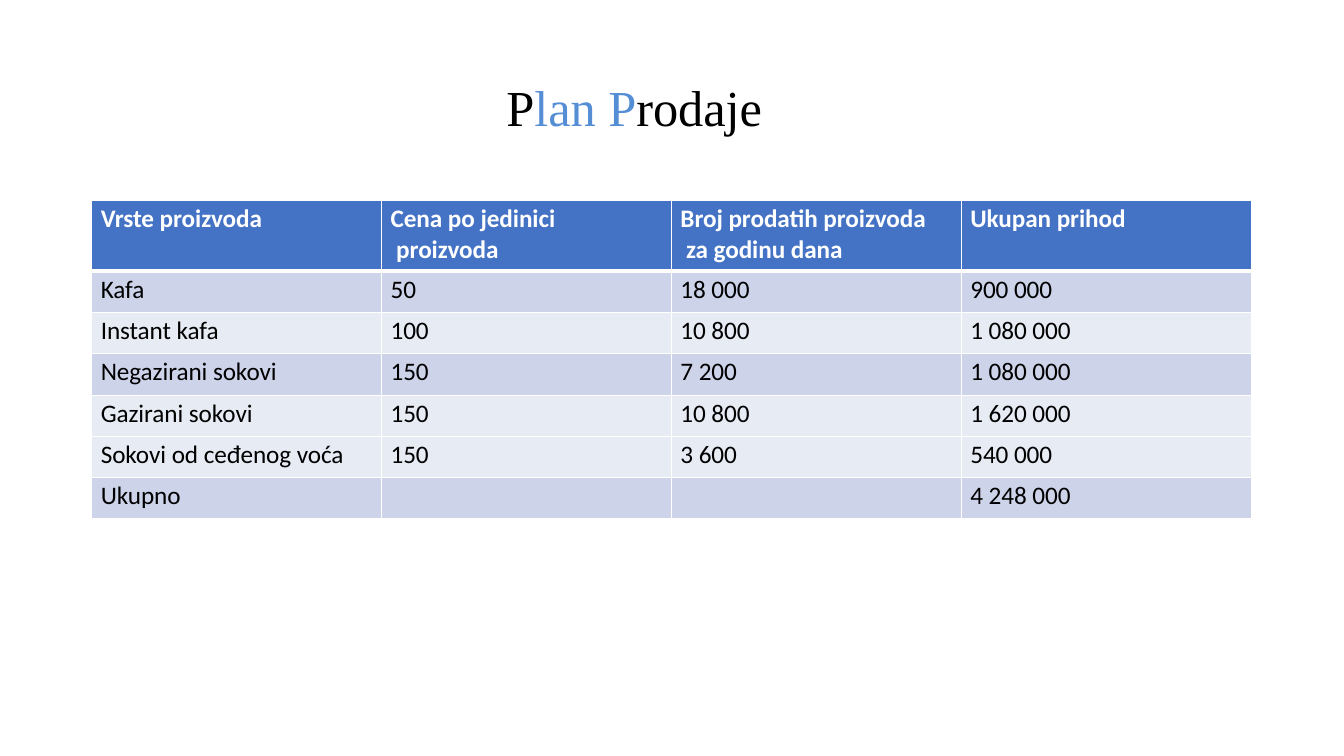
from lxml import etree
from pptx import Presentation
from pptx.dml.color import RGBColor
from pptx.enum import text as enum_text
from pptx.oxml import ns
from pptx.util import Inches, Pt

BLACK = RGBColor(0x00, 0x00, 0x00)
WHITE = RGBColor(0xFF, 0xFF, 0xFF)
TITLE_BLUE = RGBColor(0x55, 0x8E, 0xD5)
HEADER_BLUE = RGBColor(0x44, 0x72, 0xC4)
BAND_DARK = RGBColor(0xCD, 0xD4, 0xEA)
BAND_LIGHT = RGBColor(0xE7, 0xEB, 0xF4)

TABLE_WIDTH = 11.5
HEADINGS = [
    "Vrste proizvoda",
    "Cena po jedinici\v proizvoda",
    "Broj prodatih proizvoda\v za godinu dana",
    "Ukupan prihod",
]
SALES = [
    (BAND_DARK, ["Kafa", "50", "18 000", "900 000"]),
    (BAND_LIGHT, ["Instant kafa", "100", "10 800", "1 080 000"]),
    (BAND_DARK, ["Negazirani sokovi", "150", "7 200", "1 080 000"]),
    (BAND_LIGHT, ["Gazirani sokovi", "150", "10 800", "1 620 000"]),
    (BAND_LIGHT, ["Sokovi od ceđenog voća", "150", "3 600", "540 000"]),
    (BAND_DARK, ["Ukupno", "", "", "4 248 000"]),
]


def add_text(paragraph, content, *, font, size, color, bold=False):
    """Append formatted text to a paragraph, breaking lines at vertical tabs."""
    for index, line in enumerate(content.split("\v")):
        if index:
            paragraph.add_line_break()
        run = paragraph.add_run()
        run.text = line
        run.font.name = font
        run.font.size = Pt(size)
        run.font.bold = bold
        run.font.color.rgb = color
        run.font._element.set("spc", "-5")


def add_title(slide):
    """Add the centred two-colour title."""
    box = slide.shapes.add_textbox(Inches(1), Inches(0.75), Inches(10.58), Inches(0.62))
    frame = box.text_frame
    frame.word_wrap = True
    frame.margin_left = frame.margin_right = frame.margin_bottom = 0
    frame.margin_top = Inches(0.01)
    paragraph = frame.paragraphs[0]
    paragraph.alignment = enum_text.PP_ALIGN.CENTER
    paragraph.space_before = Pt(1)
    for content, color in [("P", BLACK), ("lan P", TITLE_BLUE), ("rodaje", BLACK)]:
        add_text(paragraph, content, font="Times New Roman", size=36, color=color)


def set_borders(cell, top, bottom):
    """Draw white cell borders with the given top and bottom widths in points."""
    properties = cell._tc.get_or_add_tcPr()
    sides = [("lnL", 1), ("lnR", 1), ("lnT", top), ("lnB", bottom)]
    for position, (side, width) in enumerate(sides):
        line = etree.Element(ns.qn(f"a:{side}"), w=str(Pt(width)))
        fill = etree.SubElement(line, ns.qn("a:solidFill"))
        etree.SubElement(fill, ns.qn("a:srgbClr"), val=str(WHITE))
        properties.insert(position, line)


def fill_cell(cell, content, *, fill, color, bold=False, top=1, bottom=1):
    """Set the text, fill, margins and borders of one table cell."""
    cell.margin_left = Inches(0.09)
    cell.margin_top = Inches(0.03)
    cell.margin_right = cell.margin_bottom = 0
    cell.fill.solid()
    cell.fill.fore_color.rgb = fill
    set_borders(cell, top, bottom)
    if content:
        paragraph = cell.text_frame.paragraphs[0]
        paragraph.space_before = Pt(2.2)
        add_text(paragraph, content, font="Calibri", size=18, color=color, bold=bold)


def add_sales_table(slide):
    """Add the sales plan table with its header and banded rows."""
    frame = slide.shapes.add_table(
        len(SALES) + 1, len(HEADINGS), Inches(0.91), Inches(1.99), Inches(TABLE_WIDTH), Inches(3.14)
    )
    table = frame.table
    for column in table.columns:
        column.width = Inches(TABLE_WIDTH / len(HEADINGS))
    for index, row in enumerate(table.rows):
        row.height = Inches(0.41 if index else 0.7)
    for column, heading in enumerate(HEADINGS):
        fill_cell(table.cell(0, column), heading, fill=HEADER_BLUE, color=WHITE, bold=True, bottom=3)
    for row, (band, values) in enumerate(SALES, start=1):
        for column, value in enumerate(values):
            top = 3 if row == 1 else 1
            fill_cell(table.cell(row, column), value, fill=band, color=BLACK, top=top)


def main():
    """Build the sales plan slide and save it."""
    presentation = Presentation()
    presentation.slide_width = Inches(13.33)
    presentation.slide_height = Inches(7.5)
    slide = presentation.slides.add_slide(presentation.slide_layouts[6])
    add_title(slide)
    add_sales_table(slide)
    presentation.save("out.pptx")


if __name__ == "__main__":
    main()
